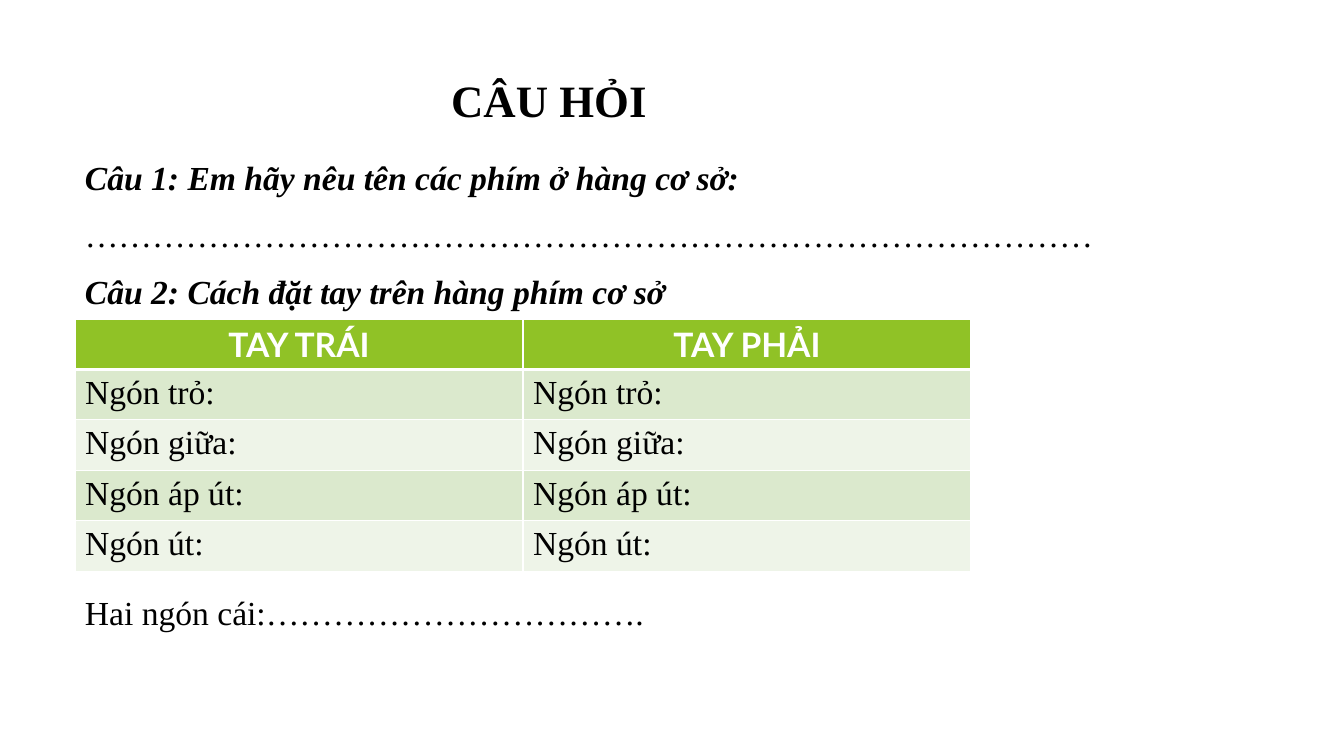
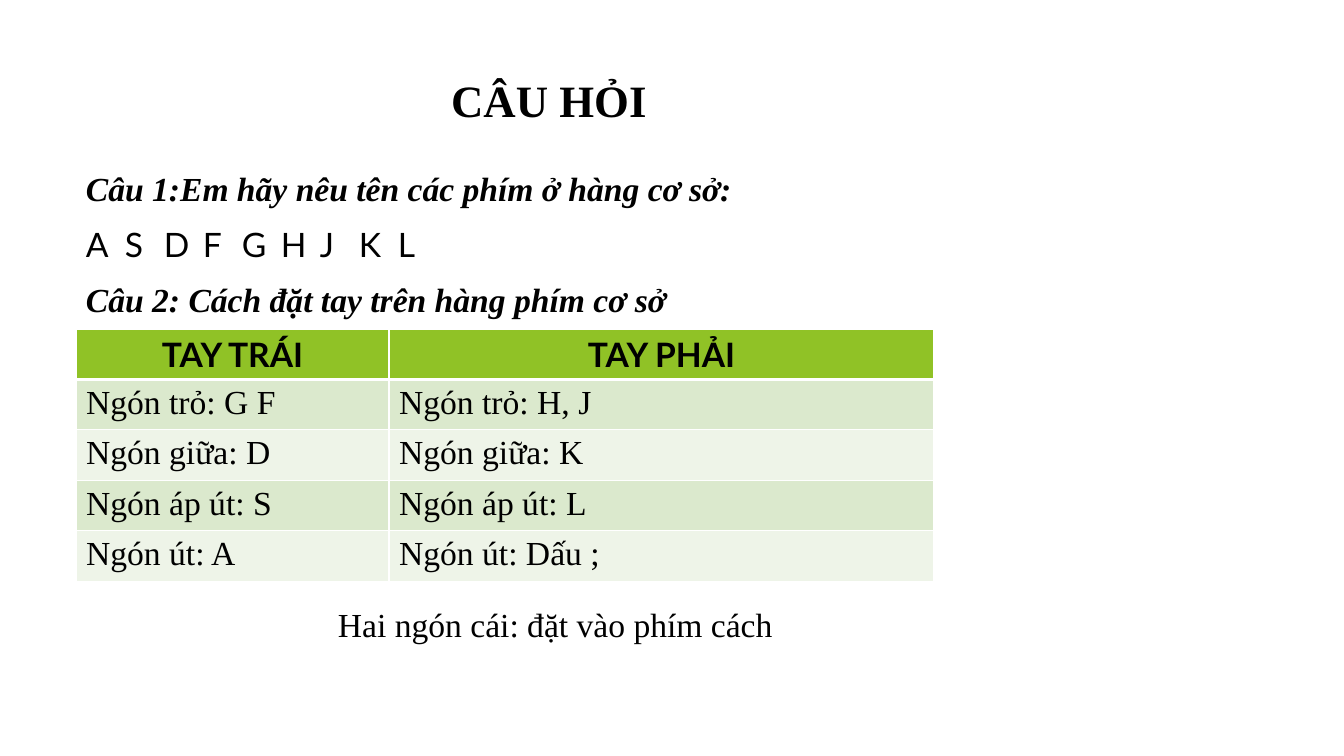
from dataclasses import dataclass

import pptx
import pptx.dml.color
import pptx.enum.text
import pptx.oxml
import pptx.oxml.ns
import pptx.util

PX = 914400 / 100.8  # EMU in one px
SERIF, SANS = "Times New Roman", "Lato"
COLORS = {
    "black": "000000",
    "white": "FFFFFF",
    "header": "90C226",
    "band_dark": "DBE9CD",
    "band_light": "EEF4E8",
}
HEADINGS = ("TAY TRÁI", "TAY PHẢI")
FINGERS = ("Ngón trỏ:", "Ngón giữa:", "Ngón áp út:", "Ngón út:")
TITLE = "CÂU HỎI"
TAB_STEP = 39
CENTER = pptx.enum.text.PP_ALIGN.CENTER


@dataclass(frozen=True)
class Line:
    text: str
    size: int = 24
    font: str = SERIF
    color: str = "black"
    bold: bool = False
    italic: bool = False
    center: bool = False


@dataclass(frozen=True)
class Box:
    left: int
    top: int
    width: int
    height: int


@dataclass(frozen=True)
class QuestionSlide:
    body: Box
    lines: tuple[Line, ...]
    gap: int
    table: Box
    columns: tuple[int, int]
    row_heights: tuple[int, int]
    heading_color: str
    answers: tuple[tuple[str, str], ...]
    closing: Box
    closing_text: str


def px(n: int) -> int:
    return round(n * PX)


def rgb(name: str) -> pptx.dml.color.RGBColor:
    return pptx.dml.color.RGBColor.from_string(COLORS[name])


def write_line(p, line: Line) -> None:
    """Fill one paragraph; tabs in the text fall on equal stops."""
    tabs = line.text.count("\t")
    if tabs:
        stops = "".join(f'<a:tab pos="{px(TAB_STEP * (i + 1))}" algn="l"/>'
                        for i in range(tabs))
        p._p.get_or_add_pPr().append(pptx.oxml.parse_xml(
            f'<a:tabLst {pptx.oxml.ns.nsdecls("a")}>{stops}</a:tabLst>'))
    if line.center:
        p.alignment = CENTER
    r = p.add_run()
    r.text = line.text
    r.font.size = pptx.util.Pt(line.size)
    r.font.name = line.font
    r.font.bold = line.bold
    r.font.italic = line.italic
    r.font.color.rgb = rgb(line.color)


def add_text(s, box: Box, lines: tuple[Line, ...], gap: int = 0) -> None:
    sp = s.shapes.add_textbox(px(box.left), px(box.top), px(box.width), px(box.height))
    tf = sp.text_frame
    tf.word_wrap = True
    for i, line in enumerate(lines):
        p = tf.add_paragraph() if i else tf.paragraphs[0]
        write_line(p, line)
        if i:
            p.space_before = pptx.util.Pt(gap)


def set_borders(cell, row: int) -> None:
    """White rules, with a thick one under the header."""
    widths = {"L": 1, "R": 1, "T": 3 if row == 1 else 1, "B": 3 if row == 0 else 1}
    tc_pr = cell._tc.get_or_add_tcPr()
    for side, width in widths.items():
        tc_pr.append(pptx.oxml.parse_xml(
            f'<a:ln{side} {pptx.oxml.ns.nsdecls("a")} w="{pptx.util.Pt(width)}">'
            f'<a:solidFill><a:srgbClr val="{COLORS["white"]}"/></a:solidFill>'
            f'</a:ln{side}>'))


def add_finger_table(s, q: QuestionSlide) -> None:
    rows = [HEADINGS] + [
        tuple(f"{finger} {answer}".strip() for answer in pair)
        for finger, pair in zip(FINGERS, q.answers)]
    box = q.table
    table = s.shapes.add_table(len(rows), len(HEADINGS), px(box.left), px(box.top),
                               px(box.width), px(box.height)).table
    for column, width in zip(table.columns, q.columns):
        column.width = px(width)
    for i, texts in enumerate(rows):
        header = i == 0
        table.rows[i].height = px(q.row_heights[min(i, 1)])
        fill = "header" if header else ("band_dark" if i % 2 else "band_light")
        for j, text in enumerate(texts):
            cell = table.cell(i, j)
            set_borders(cell, i)
            cell.fill.solid()
            cell.fill.fore_color.rgb = rgb(fill)
            line = (Line(text, font=SANS, color=q.heading_color, bold=True, center=True)
                    if header else Line(text))
            write_line(cell.text_frame.paragraphs[0], line)


def add_question_slide(prs, q: QuestionSlide) -> None:
    s = prs.slides.add_slide(prs.slide_layouts[6])
    add_text(s, Box(75, 68, 948, 97), (Line(TITLE, size=32, bold=True, center=True),))
    add_text(s, q.body, q.lines, q.gap)
    add_finger_table(s, q)
    add_text(s, q.closing, (Line(q.closing_text),))


def question(text: str) -> Line:
    return Line(text, bold=True, italic=True)


SECOND_QUESTION = question("Câu 2: Cách đặt tay trên hàng phím cơ sở")
SLIDES = (
    # Questions to fill in
    QuestionSlide(
        body=Box(75, 152, 1073, 165),
        lines=(
            question("Câu 1: Em hãy nêu tên các phím ở hàng cơ sở:"),
            Line("………………………………………………………………………………"),
            SECOND_QUESTION,
        ),
        gap=12,
        table=Box(75, 319, 896, 205),
        columns=(448, 448),
        row_heights=(41, 41),
        heading_color="white",
        answers=(("", ""),) * len(FINGERS),
        closing=Box(75, 587, 948, 50),
        closing_text="Hai ngón cái:…………………………….",
    ),
    # Answers
    QuestionSlide(
        body=Box(76, 163, 948, 165),
        lines=(
            question("Câu 1:Em hãy nêu tên các phím ở hàng cơ sở:"),
            Line("\t".join("ASDFGHJKL"), font=SANS),
            SECOND_QUESTION,
        ),
        gap=11,
        table=Box(76, 329, 858, 237),
        columns=(313, 545),
        row_heights=(45, 48),
        heading_color="black",
        answers=(("G F", "H, J"), ("D", "K"), ("S", "L"), ("A", "Dấu ;")),
        closing=Box(328, 599, 695, 50),
        closing_text="Hai ngón cái: đặt vào phím cách",
    ),
)


def main() -> None:
    prs = pptx.Presentation()
    prs.slide_width, prs.slide_height = px(1344), px(756)
    for q in SLIDES:
        add_question_slide(prs, q)
    prs.save("out.pptx")


if __name__ == "__main__":
    main()
